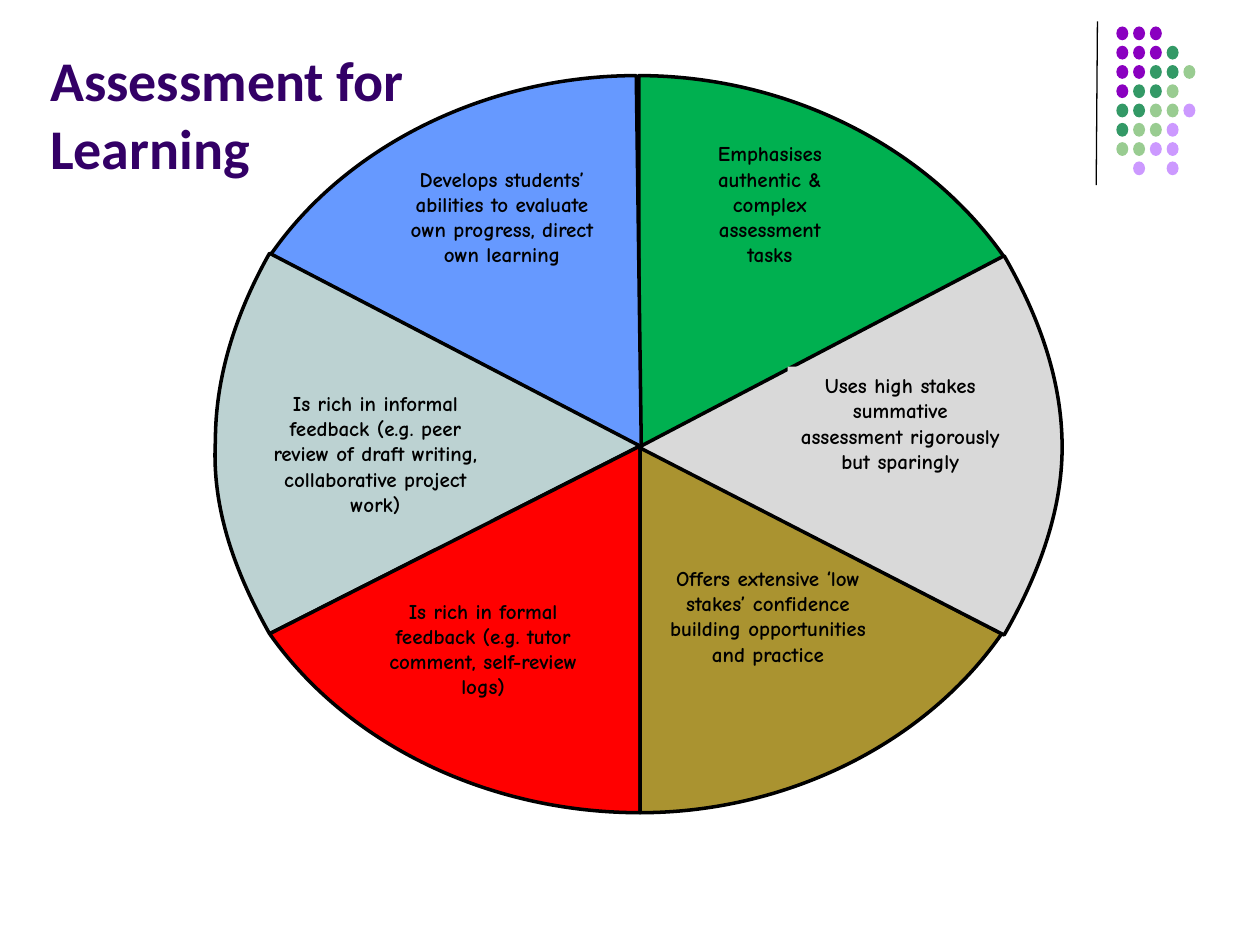
from dataclasses import dataclass

import pptx
import pptx.dml.color
import pptx.enum.shapes
import pptx.enum.text
import pptx.oxml.ns
import pptx.util
from lxml import etree

COLUMNS, ROWS = 100, 75
CELL = pptx.util.Inches(0.1)


@dataclass(frozen=True)
class Theme:
    title_font: str = "Calibri"
    label_font: str = "Comic Neue"
    title_size: int = 32
    label_size: int = 12
    title_color: str = "330066"
    ink: str = "000000"
    outline_width: float = 2
    rule_width: float = 0.75
    green: str = "00B050"
    blue: str = "6699FF"
    teal: str = "BCD2D2"
    red: str = "FF0000"
    ochre: str = "AA9330"
    grey: str = "D9D9D9"


THEME = Theme()
DOT_COLORS = {"P": "8A00C0", "G": "339966", "L": "99CC91", "V": "CC99FF"}
DOT_ROWS = ["PPP", "PPPG", "PPGGL", "PGGL", "GGLLV", "GLLV", "LLVV", " V V"]

# Each slice: fill, hub, rim as Bezier points (three more per curve),
# label frame (left, top, width, height), side margin, whether the label
# is filled, label.
SLICES = [
    (THEME.green, (50.7, 35.8),
     [(79.7, 20.4), (73.5, 11.5), (62.3, 6), (50.7, 6)],
     (54.4, 10.7, 13.4, 11), 1, True,
     "Emphasises authentic & complex assessment tasks"),
    (THEME.blue, (50.9, 35.5),
     [(50.5, 6), (38.9, 6), (27.6, 11.4), (21.5, 20.2)],
     (31, 12.7, 17.7, 11), 1, False,
     "Develops students’ abilities to evaluate own progress, direct own learning"),
    (THEME.teal, (50.8, 35.4),
     [(21.4, 20.1), (18.7, 24.9), (17.1, 29.9), (17.1, 35),
      (16.8, 40.4), (18.7, 45.5), (21.4, 50.3)],
     (20.4, 30.5, 18.8, 13), 1, True,
     "Is rich in informal feedback (e.g. peer review of draft writing, "
     "collaborative project work)"),
    (THEME.red, (50.8, 35.4),
     [(21.4, 50.3), (27.6, 59.1), (38.8, 64.5), (50.8, 64.5)],
     (28, 47, 20.7, 9), 2.3, False,
     "Is rich in formal feedback (e.g. tutor comment, self-review logs)"),
    (THEME.ochre, (50.8, 35.4),
     [(50.8, 64.5), (62.3, 64.5), (73.4, 59.1), (79.5, 50.3)],
     (51.9, 44.4, 18.1, 11), 1, False,
     "Offers extensive ‘low stakes’ confidence building opportunities and practice"),
    (THEME.grey, (50.7, 35.5),
     [(79.7, 50.4), (82.4, 45.7), (84.3, 40.6), (84.3, 35.5),
      (84.3, 30.1), (82.4, 25), (79.7, 20.3)],
     (62.5, 29.1, 17.9, 11), 1, True,
     "Uses high stakes summative assessment rigorously but sparingly"),
]


def grid(*cells):
    return [round(cell * CELL) for cell in cells]


def rgb(value):
    return pptx.dml.color.RGBColor.from_string(value)


def paint(shape, color):
    shape.shadow.inherit = False
    shape.fill.solid()
    shape.fill.fore_color.rgb = rgb(color)


def bend_rim(wedge, curve_count):
    """Turn each leading run of three straight segments into one Bezier curve."""
    segments = list(wedge._element.iter(pptx.oxml.ns.qn("a:lnTo")))
    for index in range(curve_count):
        first, *others = segments[3 * index:3 * index + 3]
        curve = etree.Element(pptx.oxml.ns.qn("a:cubicBezTo"))
        first.addprevious(curve)
        for segment in (first, *others):
            curve.append(segment[0])
            segment.getparent().remove(segment)


def add_slice(slide, color, hub, rim):
    outline = [grid(*point) for point in rim + [hub]]
    builder = slide.shapes.build_freeform(*outline[0], scale=1.0)
    builder.add_line_segments(outline[1:], close=True)
    wedge = builder.convert_to_shape()
    bend_rim(wedge, len(rim) // 3)
    paint(wedge, color)
    wedge.line.color.rgb = rgb(THEME.ink)
    wedge.line.width = pptx.util.Pt(THEME.outline_width)


def write(box, text, font_name, size, color, align, anchor):
    frame = box.text_frame
    frame.word_wrap = True
    frame.vertical_anchor = anchor
    paragraph = frame.paragraphs[0]
    paragraph.text = text
    paragraph.alignment = align
    paragraph.font.name = font_name
    paragraph.font.size = pptx.util.Pt(size)
    paragraph.font.bold = True
    paragraph.font.color.rgb = rgb(color)


def add_label(slide, frame, margin, text, backing):
    """Slice label; backing is its fill colour, or None for a clear box."""
    if backing:
        box = slide.shapes.add_shape(pptx.enum.shapes.MSO_SHAPE.RECTANGLE, *grid(*frame))
        paint(box, backing)
        box.line.fill.background()
    else:
        box = slide.shapes.add_textbox(*grid(*frame))
    box.text_frame.margin_left, box.text_frame.margin_right = grid(margin, margin)
    write(box, text, THEME.label_font, THEME.label_size, THEME.ink,
          pptx.enum.text.PP_ALIGN.CENTER, pptx.enum.text.MSO_ANCHOR.TOP)


def add_title(slide, text):
    box = slide.shapes.add_textbox(*grid(3, 3, 36.4, 11.8))
    write(box, text, THEME.title_font, THEME.title_size, THEME.title_color,
          pptx.enum.text.PP_ALIGN.LEFT, pptx.enum.text.MSO_ANCHOR.BOTTOM)


def add_rule(slide, start, end):
    rule = slide.shapes.add_connector(
        pptx.enum.shapes.MSO_CONNECTOR.STRAIGHT, *grid(*start, *end))
    rule.line.color.rgb = rgb(THEME.ink)
    rule.line.width = pptx.util.Pt(THEME.rule_width)
    etree.SubElement(rule._element.spPr, pptx.oxml.ns.qn("a:effectLst"))


def add_dots(slide, left, top, column_pitch, row_pitch):
    for row, codes in enumerate(DOT_ROWS):
        for column, code in enumerate(codes):
            if code in DOT_COLORS:
                dot = slide.shapes.add_shape(
                    pptx.enum.shapes.MSO_SHAPE.OVAL,
                    *grid(left + column * column_pitch, top + row * row_pitch, 0.95, 1.1))
                paint(dot, DOT_COLORS[code])
                dot.line.fill.background()


def main():
    deck = pptx.Presentation()
    deck.slide_width, deck.slide_height = grid(COLUMNS, ROWS)
    slide = deck.slides.add_slide(deck.slide_layouts[6])
    add_rule(slide, (87.1, 1.7), (87, 14.7))
    add_dots(slide, 88.6, 2.1, 1.33, 1.53)
    for color, hub, rim, frame, margin, filled, text in SLICES:
        add_slice(slide, color, hub, rim)
        add_label(slide, frame, margin, text, color if filled else None)
    add_title(slide, "Assessment for Learning")
    deck.save("out.pptx")


if __name__ == "__main__":
    main()
